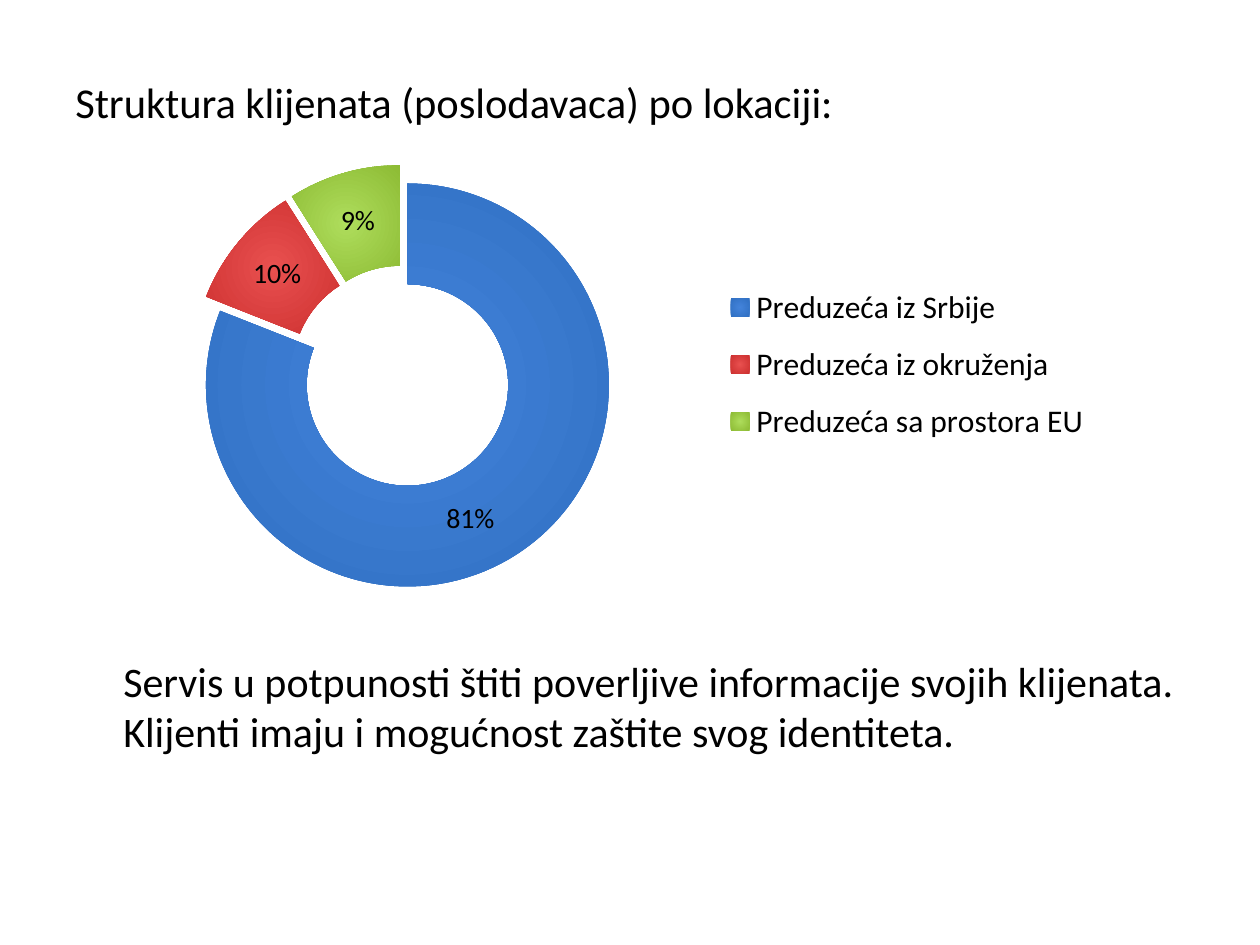
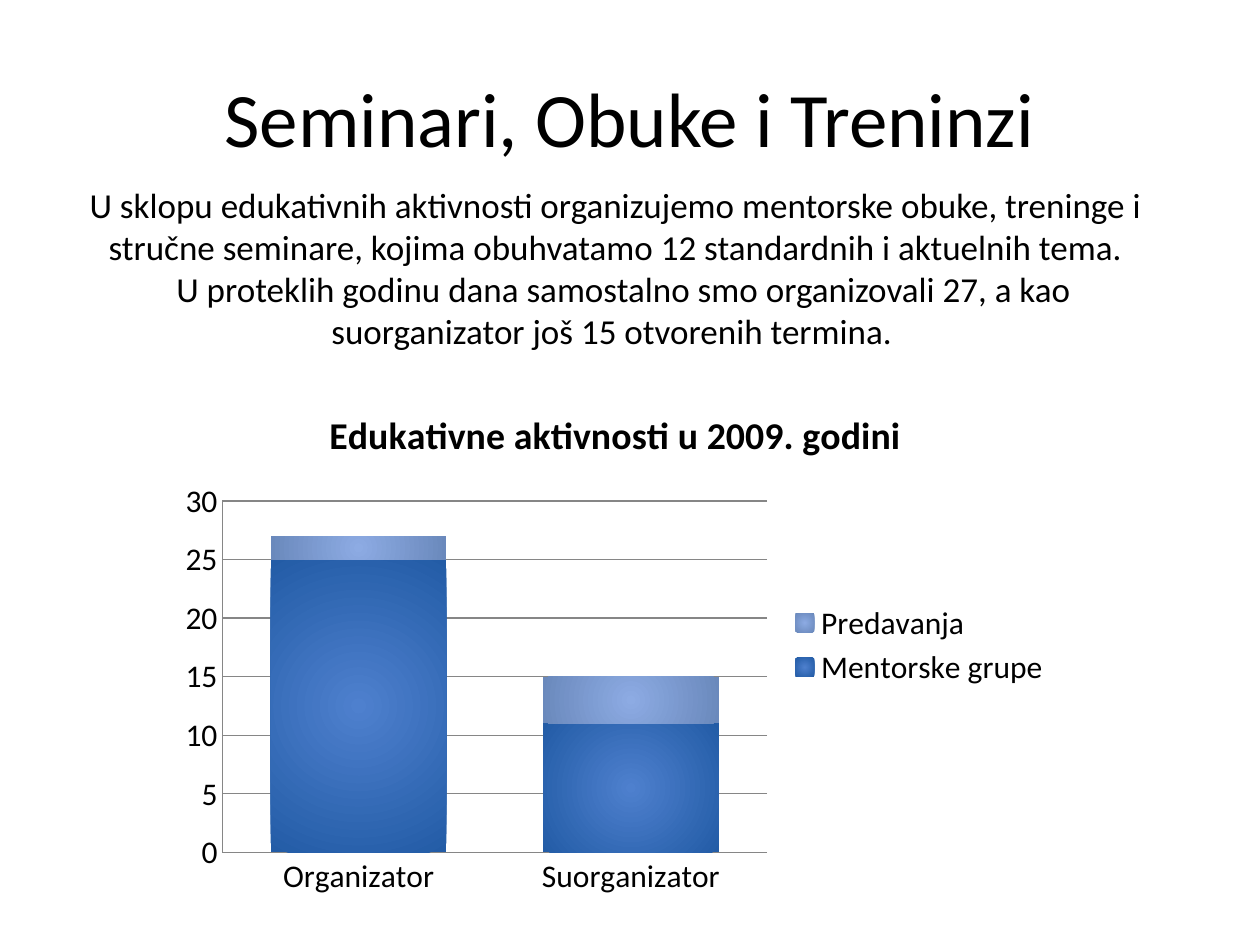
from copy import deepcopy
from dataclasses import dataclass

from lxml import etree
from pptx import Presentation
from pptx.chart.data import CategoryChartData
from pptx.dml.color import RGBColor
from pptx.enum.chart import XL_CHART_TYPE, XL_LEGEND_POSITION, XL_TICK_MARK
from pptx.enum.text import MSO_ANCHOR, PP_ALIGN
from pptx.oxml import parse_xml
from pptx.oxml.ns import nsdecls, qn
from pptx.util import Inches, Pt

DOUGHNUT = XL_CHART_TYPE.DOUGHNUT
STACKED = XL_CHART_TYPE.COLUMN_STACKED
LEGEND_RIGHT = XL_LEGEND_POSITION.RIGHT
NO_TICK = XL_TICK_MARK.NONE
LEFT, CENTER = PP_ALIGN.LEFT, PP_ALIGN.CENTER
TOP, MIDDLE = MSO_ANCHOR.TOP, MSO_ANCHOR.MIDDLE


@dataclass(frozen=True)
class Theme:
    font: str = "Calibri"
    ink: str = "000000"
    grid: str = "868686"
    title: float = 44
    heading: float = 24.3
    statement: float = 24
    body: float = 20
    chart_title: float = 21.6
    chart: float = 18
    label: float = 16
    locations: tuple = (("4383DA", "3070C3"), ("E9504F", "CC3030"), ("AEDD5C", "8DBB34"))
    activities: tuple = (("4E80CE", "235CA6"), ("8DABE3", "6A89BC"))


THEME = Theme()


def style_font(font, size, bold=False):
    font.name = THEME.font
    font.size = Pt(size)
    font.bold = bold
    font.color.rgb = RGBColor.from_string(THEME.ink)


def add_text(page, box, lines, size, align=LEFT, anchor=TOP):
    frame = page.shapes.add_textbox(*map(Inches, box)).text_frame
    frame.word_wrap = True
    frame.vertical_anchor = anchor
    for index, line in enumerate(lines):
        para = frame.add_paragraph() if index else frame.paragraphs[0]
        para.alignment = align
        span = para.add_run()
        span.text = line
        style_font(span.font, size)
    return frame


def fill_radial(part, colors):
    part.format.fill.gradient()
    gradient = part.format.fill._xPr.find(qn("a:gradFill"))
    center, edge = colors
    gradient.getparent().replace(gradient, parse_xml(
        f'<a:gradFill {nsdecls("a")} rotWithShape="1"><a:gsLst>'
        f'<a:gs pos="0"><a:srgbClr val="{center}"/></a:gs>'
        f'<a:gs pos="100000"><a:srgbClr val="{edge}"/></a:gs></a:gsLst>'
        '<a:path path="circle"><a:fillToRect l="50000" t="50000" r="50000" b="50000"/>'
        '</a:path></a:gradFill>'))


def add_chart(page, box, kind, categories, series):
    data = CategoryChartData()
    data.categories = categories
    for name, values in series:
        data.add_series(name, values)
    chart = page.shapes.add_chart(kind, *map(Inches, box), data).chart
    style_font(chart.font, THEME.chart)
    chart.has_title = False
    chart.has_legend = True
    chart.legend.position = LEGEND_RIGHT
    chart.legend.include_in_layout = False
    style_font(chart.legend.font, THEME.chart)
    return chart


def place_part(part, index, left, top, width, height, target=""):
    for layout in part.findall(qn("c:layout")):
        part.remove(layout)
    part.insert(index, parse_xml(
        f'<c:layout {nsdecls("c")}><c:manualLayout>{target}'
        '<c:xMode val="edge"/><c:yMode val="edge"/>'
        f'<c:x val="{left}"/><c:y val="{top}"/><c:w val="{width}"/><c:h val="{height}"/>'
        '</c:manualLayout></c:layout>'))


def shift_first_label(labels, right, down):
    label = parse_xml(
        f'<c:dLbl {nsdecls("c")}><c:idx val="0"/><c:layout><c:manualLayout>'
        f'<c:x val="{right}"/><c:y val="{down}"/></c:manualLayout></c:layout>'
        '<c:numFmt formatCode="0%" sourceLinked="0"/>'
        '<c:showLegendKey val="0"/><c:showVal val="0"/><c:showCatName val="0"/>'
        '<c:showSerName val="0"/><c:showPercent val="1"/><c:showBubbleSize val="0"/>'
        '</c:dLbl>')
    label.insert(3, deepcopy(labels._element.find(qn("c:txPr"))))
    labels._element.insert(0, label)


def add_location_doughnut(page, box):
    chart = add_chart(
        page, box, DOUGHNUT,
        ("Preduzeća iz Srbije", "Preduzeća iz okruženja", "Preduzeća sa prostora EU"),
        [("Series 1", (81, 10, 9))])
    place_part(chart._chartSpace.chart.plotArea, 0, 0.107, 0.067, 0.371, 0.891,
               '<c:layoutTarget val="inner"/>')
    place_part(chart.legend._element, 1, 0.57, 0.27, 0.35, 0.42)
    plot = chart.plots[0]
    plot.vary_by_categories = True
    series = plot.series[0]
    for index, colors in enumerate(THEME.locations):
        fill_radial(series.points[index], colors)
    for point, distance in zip(series._element.findall(qn("c:dPt")), ("7", "13", "13")):
        explosion = etree.Element(qn("c:explosion"), val=distance)
        point.find(qn("c:spPr")).addprevious(explosion)
    labels = series.data_labels
    labels.show_value = False
    labels.show_percentage = True
    labels.number_format = "0%"
    labels.number_format_is_linked = False
    style_font(labels.font, THEME.label)
    shift_first_label(labels, -0.02, 0.02)


def add_activity_columns(page, box):
    chart = add_chart(
        page, box, STACKED, ("Organizator", "Suorganizator"),
        [("Mentorske grupe", (25, 11)), ("Predavanja", (2, 4))])
    chart.has_title = True
    span = chart.chart_title.text_frame.paragraphs[0].add_run()
    span.text = "Edukativne aktivnosti u 2009. godini"
    style_font(span.font, THEME.chart_title, bold=True)
    plot = chart.plots[0]
    plot.vary_by_categories = False
    plot.gap_width = 55
    plot.overlap = 100
    for series, colors in zip(plot.series, THEME.activities):
        fill_radial(series, colors)
    values = chart.value_axis
    values.minimum_scale, values.maximum_scale, values.major_unit = 0, 30, 5
    values.has_major_gridlines = True
    for axis in (chart.category_axis, values):
        axis.major_tick_mark = NO_TICK
        axis.minor_tick_mark = NO_TICK
        style_font(axis.tick_labels.font, THEME.chart)
    for ruled in (chart.category_axis, values, values.major_gridlines):
        ruled.format.line.color.rgb = RGBColor.from_string(THEME.grid)
        ruled.format.line.width = Pt(0.75)


def build_clients(page):
    add_text(page, (0.5, 0.53, 9, 0.55),
             ["Struktura klijenata (poslodavaca) po lokaciji:"], THEME.heading, anchor=MIDDLE)
    add_location_doughnut(page, (0.62, 1.17, 8.83, 3.59))
    add_text(page, (0.88, 5.15, 8.62, 0.9),
             ["Servis u potpunosti štiti poverljive informacije svojih klijenata. "
              "Klijenti imaju i mogućnost zaštite svog identiteta."], THEME.statement)


def build_seminars(page):
    add_text(page, (0.5, 0.3, 9, 1.25), ["Seminari, Obuke i Treninzi"],
             THEME.title, CENTER, MIDDLE)
    summary = add_text(
        page, (0.55, 1.41, 8.67, 1.45),
        ["U sklopu edukativnih aktivnosti organizujemo mentorske obuke, treninge i "
         "stručne seminare, kojima obuhvatamo 12 standardnih i aktuelnih tema.",
         "U proteklih godinu dana samostalno smo organizovali 27, a kao "
         "suorganizator još 15 otvorenih termina."], THEME.body, CENTER)
    indents = summary.paragraphs[1]._p.get_or_add_pPr()
    indents.set("marR", str(Inches(0.06)))
    indents.set("indent", str(Inches(0.19)))
    add_activity_columns(page, (1.33, 3.05, 7.11, 4.14))


def main():
    deck = Presentation()
    deck.slide_width, deck.slide_height = Inches(10), Inches(7.5)
    for build in (build_clients, build_seminars):
        build(deck.slides.add_slide(deck.slide_layouts[6]))
    deck.save("out.pptx")


if __name__ == "__main__":
    main()
